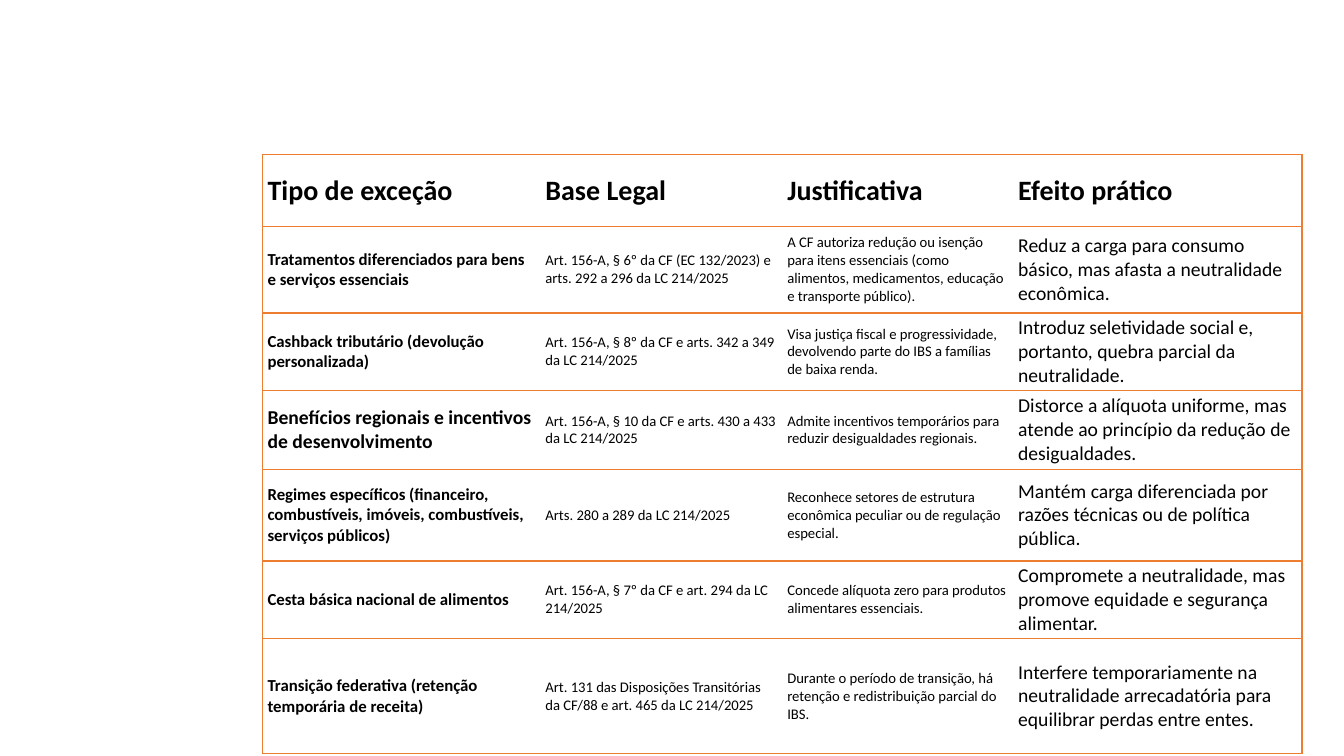
from lxml.etree import SubElement
from pptx import Presentation
from pptx.dml.color import RGBColor
from pptx.enum.text import MSO_ANCHOR
from pptx.oxml.ns import qn
from pptx.util import Pt

BLACK = RGBColor(0x00, 0x00, 0x00)
WHITE = RGBColor(0xFF, 0xFF, 0xFF)
ORANGE = RGBColor(0xED, 0x7D, 0x31)

COLUMN_WIDTHS = [198.5, 172.8, 164.9, 206.4]
ROW_HEIGHTS = [51.1, 61.9, 45.4, 56.2, 65.5, 49.7, 82.1]
COLUMN_SIZES = [12, 10.5, 10.5, 14]
HEADER_SIZE = 20
LARGE_LABEL_ROW, LARGE_LABEL_SIZE = 3, 14

CELL_FORMAT = {
    "margin_left": Pt(3.6),
    "margin_right": Pt(3.6),
    "margin_top": Pt(2.2),
    "margin_bottom": Pt(2.2),
    "vertical_anchor": MSO_ANCHOR.MIDDLE,
}

ROWS = [
    ("Tipo de exceção", "Base Legal", "Justificativa", "Efeito prático"),
    ("Tratamentos diferenciados para bens e serviços essenciais",
     "Art. 156-A, § 6º da CF (EC 132/2023) e arts. 292 a 296 da LC 214/2025",
     "A CF autoriza redução ou isenção para itens essenciais (como alimentos, "
     "medicamentos, educação e transporte público).",
     "Reduz a carga para consumo básico, mas afasta a neutralidade econômica."),
    ("Cashback tributário (devolução personalizada)",
     "Art. 156-A, § 8º da CF e arts. 342 a 349 da LC 214/2025",
     "Visa justiça fiscal e progressividade, devolvendo parte do IBS a famílias "
     "de baixa renda.",
     "Introduz seletividade social e, portanto, quebra parcial da neutralidade."),
    ("Benefícios regionais e incentivos de desenvolvimento",
     "Art. 156-A, § 10 da CF e arts. 430 a 433 da LC 214/2025",
     "Admite incentivos temporários para reduzir desigualdades regionais.",
     "Distorce a alíquota uniforme, mas atende ao princípio da redução de "
     "desigualdades."),
    ("Regimes específicos (financeiro, combustíveis, imóveis, combustíveis, "
     "serviços públicos)",
     "Arts. 280 a 289 da LC 214/2025",
     "Reconhece setores de estrutura econômica peculiar ou de regulação especial.",
     "Mantém carga diferenciada por razões técnicas ou de política pública."),
    ("Cesta básica nacional de alimentos",
     "Art. 156-A, § 7º da CF e art. 294 da LC 214/2025",
     "Concede alíquota zero para produtos alimentares essenciais.",
     "Compromete a neutralidade, mas promove equidade e segurança alimentar."),
    ("Transição federativa (retenção temporária de receita)",
     "Art. 131 das Disposições Transitórias da CF/88 e art. 465 da LC 214/2025",
     "Durante o período de transição, há retenção e redistribuição parcial do IBS.",
     "Interfere temporariamente na neutralidade arrecadatória para equilibrar "
     "perdas entre entes."),
]


def set_borders(cell, visible_sides):
    """Draw the given sides in orange and hide the others."""
    properties = cell._tc.get_or_add_tcPr()
    for index, side in enumerate("LRTB"):
        line = SubElement(properties, qn(f"a:ln{side}"), w=str(Pt(1)))
        if side in visible_sides:
            fill = SubElement(line, qn("a:solidFill"))
            SubElement(fill, qn("a:srgbClr"), val=str(ORANGE))
        else:
            SubElement(line, qn("a:noFill"))
        properties.insert(index, line)


def text_size(row, column):
    if row == 0:
        return HEADER_SIZE
    if (row, column) == (LARGE_LABEL_ROW, 0):
        return LARGE_LABEL_SIZE
    return COLUMN_SIZES[column]


def fill_cell(cell, text, size, bold):
    for name, value in CELL_FORMAT.items():
        setattr(cell, name, value)
    cell.fill.solid()
    cell.fill.fore_color.rgb = WHITE
    cell.text = text
    font = cell.text_frame.paragraphs[0].runs[0].font
    for name, value in {"name": "Calibri", "size": Pt(size), "bold": bold}.items():
        setattr(font, name, value)
    font.color.rgb = BLACK


def add_exceptions_table(slide, left, top):
    shape = slide.shapes.add_table(
        len(ROWS), len(COLUMN_WIDTHS), Pt(left), Pt(top),
        Pt(sum(COLUMN_WIDTHS)), Pt(sum(ROW_HEIGHTS)))
    table = shape.table
    table.first_row = True
    table.horz_banding = False

    # Grid
    for column, width in zip(table.columns, COLUMN_WIDTHS):
        column.width = Pt(width)
    for row, height in zip(table.rows, ROW_HEIGHTS):
        row.height = Pt(height)

    # Cells: horizontal rules everywhere, vertical ones only on the outer edges
    outer_sides = {0: "L", len(COLUMN_WIDTHS) - 1: "R"}
    for row, texts in enumerate(ROWS):
        for column, text in enumerate(texts):
            cell = table.cell(row, column)
            fill_cell(cell, text, text_size(row, column), row == 0 or column == 0)
            set_borders(cell, "TB" + outer_sides.get(column, ""))


def main():
    presentation = Presentation()
    presentation.slide_width = Pt(960)
    presentation.slide_height = Pt(540)
    slide = presentation.slides.add_slide(presentation.slide_layouts[6])
    add_exceptions_table(slide, 187.5, 110.6)
    presentation.save("out.pptx")


if __name__ == "__main__":
    main()
